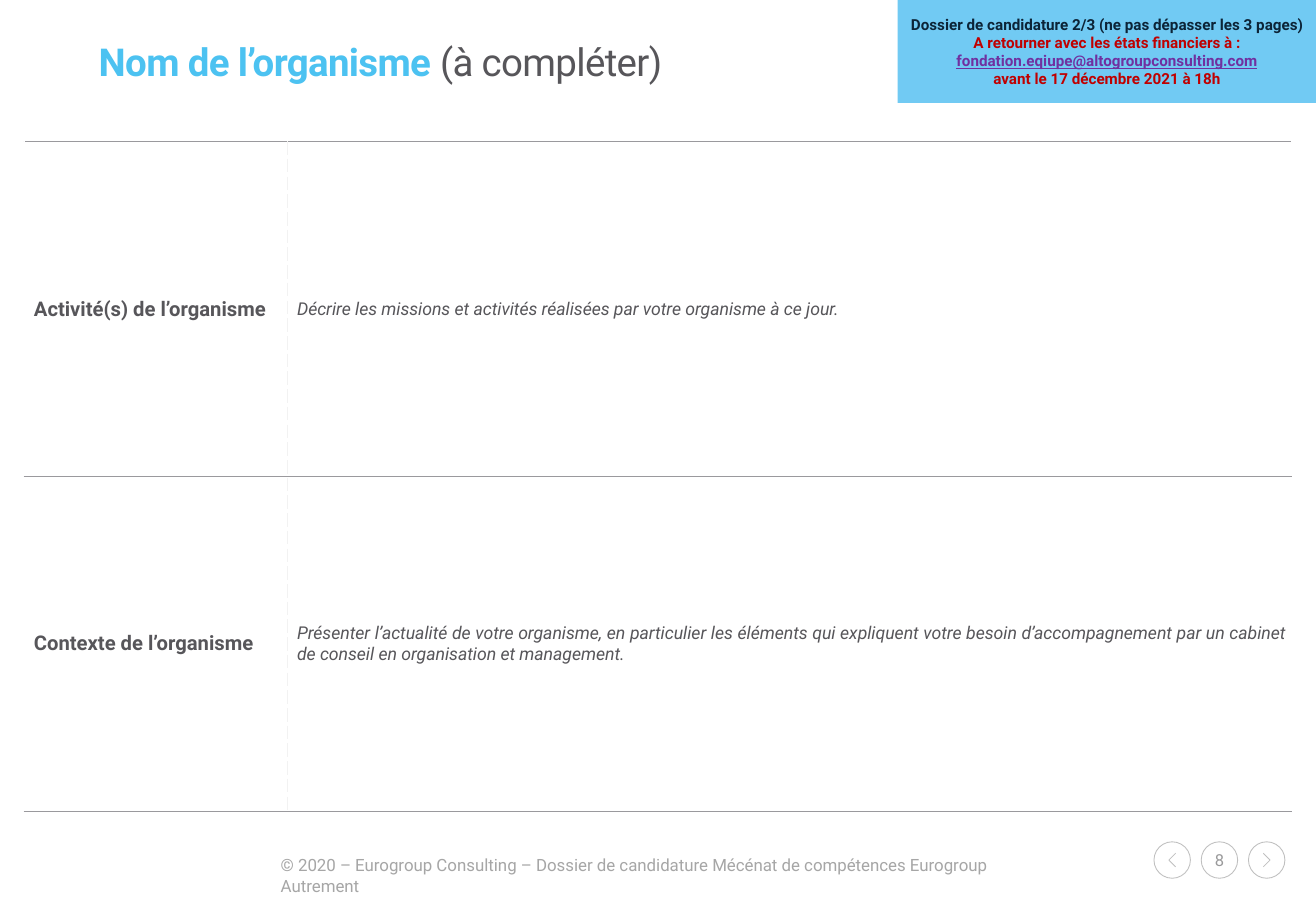
import pptx
import pptx.util
import pptx.dml.color
import pptx.enum.shapes
import pptx.enum.text
import pptx.oxml
import pptx.oxml.ns

Pt = pptx.util.Pt
ALIGN = pptx.enum.text.PP_ALIGN
MIDDLE = pptx.enum.text.MSO_ANCHOR.MIDDLE
SHAPE = pptx.enum.shapes.MSO_SHAPE

FONT = "Roboto"
COLORS = {
    "white": "FFFFFF", "sky": "4CC2F1", "panel": "71CAF3", "navy": "0C2437",
    "red": "C00000", "purple": "7030A0", "text": "57565A", "rule": "9A999D",
    "dash": "F2F2F2", "number": "9A9A9B", "ring": "BFBFBF", "footer": "A6A6A6",
}
TITLE = [("Nom de l’organisme ", "sky", True), ("(à compléter)", "text", False)]
ROWS = [
    ("Activité(s) de l’organisme",
     "Décrire les missions et activités réalisées par votre organisme à ce jour."),
    ("Contexte de l’organisme",
     "Présenter l’actualité de votre organisme, en particulier les éléments qui "
     "expliquent votre besoin d’accompagnement par un cabinet de conseil en "
     "organisation et management."),
]
NOTICE = [
    ("Dossier de candidature 2/3 (ne pas dépasser les 3 pages)", "navy", False),
    ("A retourner avec les états financiers à :", "red", False),
    ("fondation.eqiupe@altogroupconsulting.com", "purple", True),
    ("avant le 17 décembre 2021 à 18h", "red", False),
]
FOOTER = ("© 2020 – Eurogroup Consulting – Dossier de candidature "
          "Mécénat de compétences Eurogroup Autrement")
PAGE = "8"
COL_WIDTHS = (156, 595)
ROW_HEIGHT = 198.4
RING_LEFT, RING_TOP, RING_SIZE, RING_STEP = 684, 499, 21.6, 28


def rgb(name):
    return pptx.dml.color.RGBColor.from_string(COLORS[name])


def add_run(p, text, size, color, bold=False, italic=False):
    r = p.add_run()
    r.text = text
    r.font.name = FONT
    r.font.size = Pt(size)
    r.font.bold = bold
    r.font.italic = italic
    r.font.color.rgb = rgb(color)
    return r


def set_margins(box, left, top, right, bottom):
    box.margin_left, box.margin_top = Pt(left), Pt(top)
    box.margin_right, box.margin_bottom = Pt(right), Pt(bottom)


def add_border(cell, side, color, width, dash):
    ns = pptx.oxml.ns.nsdecls("a")
    cell._tc.get_or_add_tcPr().append(pptx.oxml.parse_xml(
        f'<a:ln{side} {ns} w="{int(Pt(width))}"><a:solidFill>'
        f'<a:srgbClr val="{COLORS[color]}"/></a:solidFill>'
        f'<a:prstDash val="{dash}"/></a:ln{side}>'))


def outline(sp):
    sp.shadow.inherit = False
    sp.fill.background()
    sp.line.color.rgb = rgb("ring")
    sp.line.width = Pt(0.5)


def add_title(s):
    sp = s.shapes.title
    sp.left, sp.top, sp.width, sp.height = Pt(58.5), Pt(25), Pt(663), Pt(26.6)
    tf = sp.text_frame
    tf.word_wrap = True
    tf.auto_size = pptx.enum.text.MSO_AUTO_SIZE.NONE
    tf.vertical_anchor = MIDDLE
    set_margins(tf, 0, 0, 0, 0)
    p = tf.paragraphs[0]
    p.alignment = ALIGN.LEFT
    p.line_spacing = 0.86
    for text, color, bold in TITLE:
        r = add_run(p, text, 22.8, color, bold)
        r.font._element.set("spc", "-40")


def add_form(s):
    table = s.shapes.add_table(len(ROWS), 2, Pt(14.4), Pt(84), Pt(sum(COL_WIDTHS)),
                               Pt(ROW_HEIGHT * len(ROWS))).table
    table.first_row = table.horz_banding = False
    for col, width in zip(table.columns, COL_WIDTHS):
        col.width = Pt(width)
    for i, texts in enumerate(ROWS):
        table.rows[i].height = Pt(ROW_HEIGHT)
        for j, text in enumerate(texts):
            cell = table.cell(i, j)
            cell.vertical_anchor = MIDDLE
            set_margins(cell, 5.7, 2.8, 2.8, 2.8)
            add_border(cell, "RL"[j], "dash", 1, "sysDash")
            for side in "TB":
                add_border(cell, side, "rule", 0.75, "solid")
            cell.fill.solid()
            cell.fill.fore_color.rgb = rgb("white")
            p = cell.text_frame.paragraphs[0]
            p.alignment = (ALIGN.LEFT, ALIGN.JUSTIFY)[j]
            add_run(p, text, (12, 10.5)[j], "text", bold=j == 0, italic=j == 1)


def add_notice(s):
    sp = s.shapes.add_shape(SHAPE.RECTANGLE, Pt(532), 0, Pt(248), Pt(61))
    sp.shadow.inherit = False
    sp.fill.solid()
    sp.fill.fore_color.rgb = rgb("panel")
    sp.line.fill.background()
    tf = sp.text_frame
    tf.word_wrap = True
    tf.vertical_anchor = MIDDLE
    for i, (text, color, underline) in enumerate(NOTICE):
        p = tf.add_paragraph() if i else tf.paragraphs[0]
        p.alignment = ALIGN.CENTER
        add_run(p, text, 9, color, True).font.underline = underline


def add_pager(s):
    middle = RING_TOP + RING_SIZE / 2
    for i, direction in enumerate((-1, 0, 1)):
        left = RING_LEFT + i * RING_STEP
        ring = s.shapes.add_shape(SHAPE.OVAL, Pt(left), Pt(RING_TOP),
                                  Pt(RING_SIZE), Pt(RING_SIZE))
        outline(ring)
        if direction:
            center = left + RING_SIZE / 2
            back, tip = center - 2 * direction, center + 2 * direction
            fb = s.shapes.build_freeform(Pt(back), Pt(middle - 4))
            fb.add_line_segments([(Pt(tip), Pt(middle)), (Pt(back), Pt(middle + 4))],
                                 close=False)
            outline(fb.convert_to_shape())
        else:
            tf = ring.text_frame
            tf.word_wrap = False
            tf.vertical_anchor = MIDDLE
            set_margins(tf, 0, 0, 0, 0)
            p = tf.paragraphs[0]
            p.alignment = ALIGN.CENTER
            add_run(p, PAGE, 9.8, "number")


def add_footer(s):
    tf = s.shapes.add_textbox(Pt(159.3), Pt(503.3), Pt(466), Pt(32)).text_frame
    tf.word_wrap = True
    add_run(tf.paragraphs[0], FOOTER, 10, "footer")


def main():
    prs = pptx.Presentation()
    prs.slide_width, prs.slide_height = Pt(780), Pt(540)
    s = prs.slides.add_slide(prs.slide_layouts[5])
    add_pager(s)
    add_footer(s)
    add_title(s)
    add_form(s)
    add_notice(s)
    prs.save("out.pptx")


if __name__ == "__main__":
    main()
